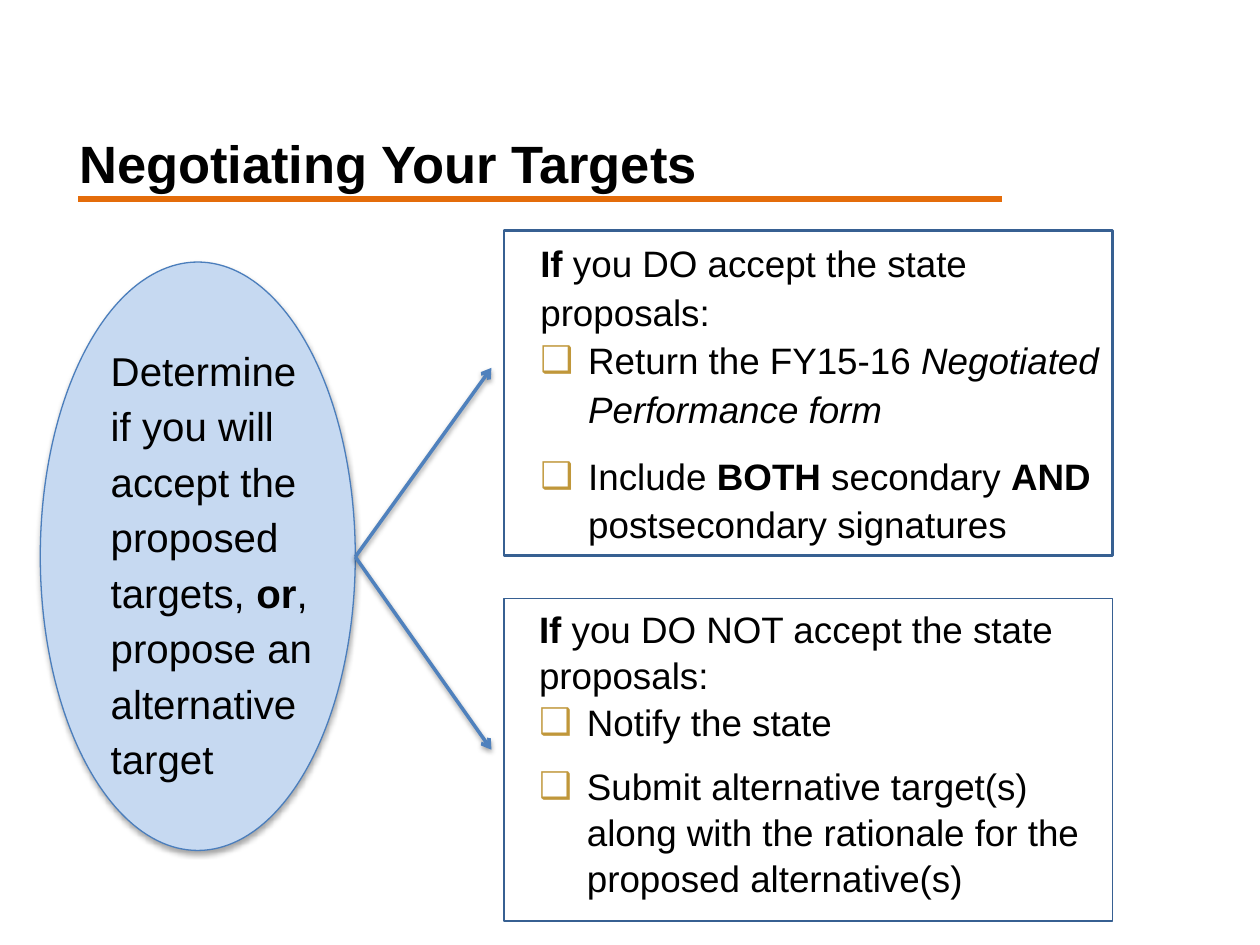
from dataclasses import dataclass

from lxml.etree import SubElement
from pptx import Presentation
from pptx.dml.color import RGBColor as Rgb
from pptx.enum.shapes import MSO_CONNECTOR as Connector, MSO_SHAPE as Shape
from pptx.enum.text import MSO_ANCHOR as Anchor, PP_ALIGN as Align
from pptx.oxml.ns import qn
from pptx.util import Emu, Inches, Pt


@dataclass(frozen=True)
class Theme:
    font: str = "Arial"
    ink: str = "000000"
    rule: str = "E46C0A"
    oval_fill: str = "C6D9F1"
    oval_line: str = "4B7EBC"
    box_line: str = "376092"
    arrow: str = "4F81BD"
    bullet: str = "C0973A"
    title_size: int = 30
    oval_size: int = 23
    box_size: int = 21


theme = Theme()
PLAIN, BOLD, ITALIC = {}, {"bold": True}, {"italic": True}
LINE_BREAK = ("\n", PLAIN)

deck = Presentation()
deck.slide_width, deck.slide_height = Inches(10), Inches(7.5)
slide = deck.slides.add_slide(deck.slide_layouts[6])
shapes = slide.shapes
COLUMN, ROW = deck.slide_width / 100, deck.slide_height / 75


def grid(*lengths):
    """Turn alternating column and row counts into slide lengths."""
    return [Emu(round(n * (ROW if i % 2 else COLUMN))) for i, n in enumerate(lengths)]


def write(para, spans, size, spacing=1.0, indent=0.0, bullet=None, before=0):
    """Fill a paragraph with (text, format) spans; a bullet hangs to their left."""
    hang = 0.38 if bullet else 0
    props = para._p.get_or_add_pPr()
    props.set("marL", str(Inches(indent + hang)))
    props.set("indent", str(Inches(-hang)))
    if bullet:
        color = SubElement(SubElement(props, qn("a:buClr")), qn("a:srgbClr"))
        color.set("val", theme.bullet)
        SubElement(props, qn("a:buFont")).set("typeface", theme.font)
        SubElement(props, qn("a:buChar")).set("char", bullet)
    layout = {"alignment": Align.LEFT, "line_spacing": spacing, "space_before": Pt(before)}
    for name, value in layout.items():
        setattr(para, name, value)
    for text, style in spans:
        if text == "\n":
            para.add_line_break()
            continue
        span = para.add_run()
        span.text = text
        for name, value in {"name": theme.font, "size": Pt(size), **style}.items():
            setattr(span.font, name, value)
        span.font.color.rgb = Rgb.from_string(theme.ink)


# Oval
oval = shapes.add_shape(Shape.OVAL, *grid(3.2, 20.8, 25, 46.7))
oval.fill.solid()
oval.fill.fore_color.rgb = Rgb.from_string(theme.oval_fill)
oval.line.color.rgb = Rgb.from_string(theme.oval_line)
oval.line.width = Pt(0.75)

# Title and its rule
title = shapes.add_textbox(*grid(5.3, 4.2, 83.3, 12.5)).text_frame
title.word_wrap = True
title.vertical_anchor = Anchor.BOTTOM
title.margin_bottom = Emu(round(1.3 * ROW))
write(title.paragraphs[0], [("Negotiating Your Targets", BOLD)], theme.title_size)

rule = shapes.add_connector(Connector.STRAIGHT, *grid(6.2, 15.8, 79.5, 15.8))
rule.line.color.rgb = Rgb.from_string(theme.rule)
rule.line.width = Pt(3)
SubElement(rule._element.spPr, qn("a:effectLst"))

# Decision text over the oval
decision = shapes.add_textbox(*grid(5.9, 26.4, 24.2, 39.2)).text_frame
decision.word_wrap = True
write(
    decision.paragraphs[0],
    [
        ("Determine", PLAIN),
        LINE_BREAK,
        ("if you will accept the proposed targets, ", PLAIN),
        ("or", BOLD),
        (", propose an alternative target", PLAIN),
    ],
    theme.oval_size, spacing=1.15, indent=0.19,
)

# Outcome boxes: top, height, line width, spacing, indent, gap, heading, bulleted items
outcomes = [
    (18.3, 25.8, 1.5, 1.1, 0.19, 10.6, " you DO accept the state proposals:", [
        [("Return the FY15-16 ", PLAIN), ("Negotiated Performance form", ITALIC)],
        [("Include ", PLAIN), ("BOTH", BOLD), (" secondary ", PLAIN), ("AND ", BOLD),
         ("postsecondary signatures", PLAIN)],
    ]),
    (47.5, 25.6, 1, 1.05, 0.18, 10.1, " you DO NOT accept the state proposals:", [
        [("Notify the state", PLAIN)],
        [("Submit alternative target(s) along with the rationale for the "
          "proposed alternative(s)", PLAIN)],
    ]),
]
for top, height, width, spacing, indent, gap, heading, items in outcomes:
    box = shapes.add_shape(Shape.RECTANGLE, *grid(40, top, 48.3, height))
    box.shadow.inherit = False
    box.fill.background()
    box.line.color.rgb = Rgb.from_string(theme.box_line)
    box.line.width = Pt(width)
    frame = box.text_frame
    frame.word_wrap = True
    frame.vertical_anchor = Anchor.TOP
    write(frame.paragraphs[0], [("If", BOLD), (heading, PLAIN)],
          theme.box_size, spacing, indent)
    for index, item in enumerate(items):
        write(frame.add_paragraph(), item, theme.box_size, spacing, indent,
              bullet="❑", before=index * gap)

# Arrows from the oval to each outcome
arrows = []
for end_row in (29.2, 59.5):
    arrow = shapes.add_connector(Connector.STRAIGHT, *grid(28.2, 44.2, 39, end_row))
    arrow.line.color.rgb = Rgb.from_string(theme.arrow)
    arrow.line.width = Pt(2)
    SubElement(arrow.line._get_or_add_ln(), qn("a:tailEnd")).set("type", "arrow")
    arrows.append(arrow)

# Soft shadows falling straight down
for shape, distance, opacity in [(oval, 1.8, 35), *((arrow, 1.6, 38) for arrow in arrows)]:
    effects = SubElement(shape._element.spPr, qn("a:effectLst"))
    shadow = SubElement(effects, qn("a:outerShdw"), blurRad=str(Pt(3.1)),
                        dist=str(Pt(distance)), dir="5400000", rotWithShape="0")
    color = SubElement(shadow, qn("a:srgbClr"), val="000000")
    SubElement(color, qn("a:alpha"), val=str(opacity * 1000))

deck.save("out.pptx")
